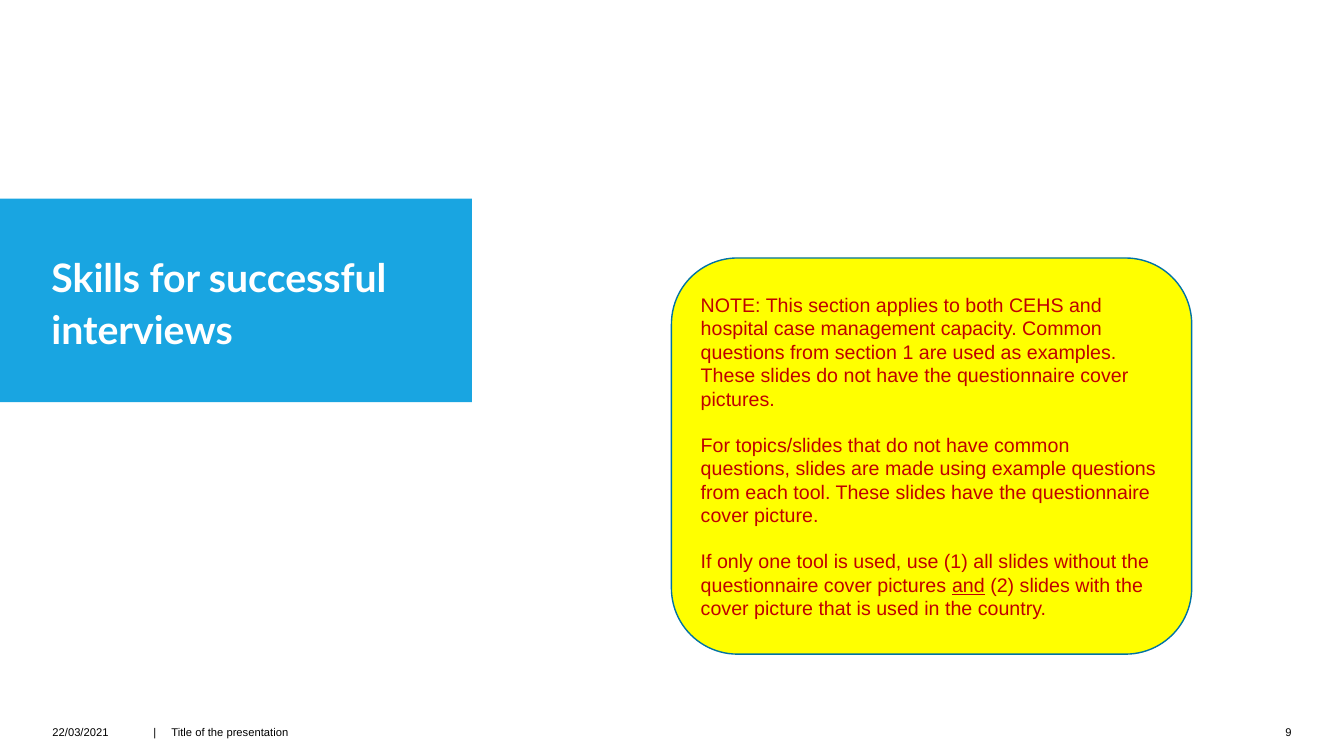
"""Build the section slide on interview skills."""
from lxml.etree import SubElement
from pptx import Presentation
from pptx.dml.color import RGBColor
from pptx.enum.shapes import MSO_SHAPE as Shape
from pptx.enum.text import MSO_ANCHOR as Anchor, PP_ALIGN as Align
from pptx.oxml.ns import qn
from pptx.util import Inches, Pt

TITLE_FONT = {"name": "Lato", "size": Pt(28), "bold": True}
NOTE_FONT = {"name": "Arial", "size": Pt(14)}
FOOTER_FONT = {"name": "Arial", "size": Pt(8)}
NOTES = [
    [("NOTE: This section applies to both CEHS and hospital case management capacity. "
      "Common questions from section 1 are used as examples. "
      "These slides do not have the questionnaire cover pictures.", False)],
    [("For topics/slides that do not have common questions, slides are made using "
      "example questions from each tool. "
      "These slides have the questionnaire cover picture.", False)],
    [("If only one tool is used, use (1) all slides without the "
      "questionnaire cover pictures ", False),
     ("and", True),
     (" (2) slides with the cover picture that is used in the country.", False)],
]


def color(value):
    """Return the colour for a hex string."""
    return RGBColor.from_string(value)


def set_format(target, values):
    """Set each attribute in values on the target."""
    for name, value in values.items():
        setattr(target, name, value)


def set_font(font, values, hex_color):
    """Apply font values and a colour."""
    set_format(font, values)
    font.color.rgb = color(hex_color)


def set_frame(frame, margins, anchor):
    """Make a text frame wrap, with margins given as left, top, right, bottom."""
    sides = ("margin_left", "margin_top", "margin_right", "margin_bottom")
    set_format(frame, dict(zip(sides, map(Inches, margins))))
    set_format(frame, {"word_wrap": True, "vertical_anchor": anchor})


def add_panel(slide, kind, box, fill):
    """Add a filled shape without shadow."""
    shape = slide.shapes.add_shape(kind, *map(Inches, box))
    shape.shadow.inherit = False
    shape.fill.solid()
    shape.fill.fore_color.rgb = color(fill)
    return shape


def add_title(slide, box, text):
    """Add the translucent title band."""
    shape = add_panel(slide, Shape.RECTANGLE, box, "009CDE")
    shape.line.fill.background()
    fill_color = shape.fill._xPr.find(qn("a:solidFill"))[0]
    SubElement(fill_color, qn("a:alpha"), val="90000")
    set_frame(shape.text_frame, (0.51, 0.2, 0.39, 0.2), Anchor.MIDDLE)
    paragraph = shape.text_frame.paragraphs[0]
    paragraph.text = text
    set_format(paragraph, {"alignment": Align.LEFT, "line_spacing": 1.1})
    set_font(paragraph.font, TITLE_FONT, "FFFFFF")


def add_note(slide, box, notes):
    """Add the rounded note with one paragraph per entry."""
    shape = add_panel(slide, Shape.ROUNDED_RECTANGLE, box, "FFFF00")
    shape.line.color.rgb = color("0073A4")
    shape.line.width = Pt(1)
    frame = shape.text_frame
    set_frame(frame, (0.1, 0.05, 0.1, 0.05), Anchor.MIDDLE)
    for index, pieces in enumerate(notes):
        paragraph = frame.add_paragraph() if index else frame.paragraphs[0]
        set_format(paragraph, {"alignment": Align.LEFT,
                               "space_before": Pt(16 if index else 0)})
        for text, underlined in pieces:
            run = paragraph.add_run()
            run.text = text
            set_font(run.font, NOTE_FONT, "C00000")
            if underlined:
                run.font.underline = True


def add_footer(slide, box):
    """Add the date, presentation title and slide number."""
    left, top, width, height = box
    fields = [
        (0, 0.86, "22/03/2021", Align.LEFT),
        (1, 3.25, "|\tTitle of the presentation", Align.LEFT),
        (width - 0.32, 0.32, "9", Align.RIGHT),
    ]
    for offset, field_width, text, alignment in fields:
        field_box = (left + offset, top, field_width, height)
        frame = slide.shapes.add_textbox(*map(Inches, field_box)).text_frame
        set_frame(frame, (0, 0, 0, 0), Anchor.TOP)
        paragraph = frame.paragraphs[0]
        paragraph.text = text
        paragraph.alignment = alignment
        if "\t" in text:
            tabs = SubElement(paragraph._p.get_or_add_pPr(), qn("a:tabLst"))
            SubElement(tabs, qn("a:tab"), pos=str(Inches(0.18)), algn="l")
        set_font(paragraph.font, FOOTER_FONT, "000000")


def main():
    """Build and save the presentation."""
    presentation = Presentation()
    set_format(presentation, {"slide_width": Inches(13.33), "slide_height": Inches(7.5)})
    slide = presentation.slides.add_slide(presentation.slide_layouts[6])
    add_title(slide, (0, 1.97, 4.68, 2.02), "Skills for successful interviews")
    add_footer(slide, (0.52, 7.2, 12.29, 0.2))
    add_note(slide, (6.66, 2.56, 5.16, 3.93), NOTES)
    presentation.save("out.pptx")


if __name__ == "__main__":
    main()
